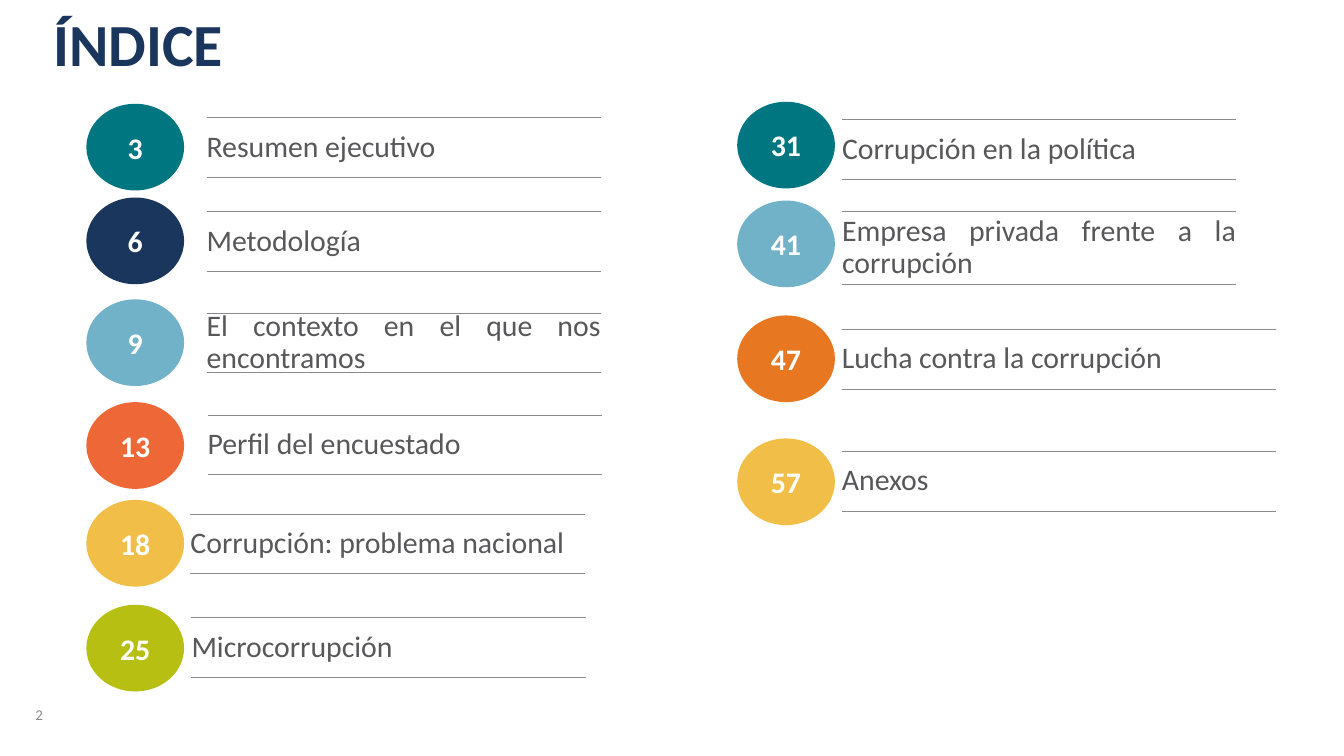
import pptx
import pptx.dml.color
import pptx.enum.shapes
import pptx.enum.text
import pptx.oxml.ns
import pptx.util
import lxml.etree

ALIGN = pptx.enum.text.PP_ALIGN
ANCHOR = pptx.enum.text.MSO_ANCHOR
COLUMNS, ROWS = 40, 30
DISC_WIDTH, DISC_HEIGHT = 2.91, 3.44
LINE_HEIGHT = 1.3
RULE_GAP, WIDE_GAP = 2.36, 2.88
NARROW, WIDE = 11.73, 12.91
LEFT_DISC, RIGHT_DISC, RIGHT_LABEL = 2.57, 21.94, 25.06


def color(value):
    return pptx.dml.color.RGBColor.from_string(value)


class IndexSlide:
    font = "Calibri"
    navy, gray, ink, white = "1B365D", "888B8D", "58585B", "FFFFFF"

    def __init__(self, prs):
        self.col = prs.slide_width / COLUMNS
        self.row = prs.slide_height / ROWS
        self.s = prs.slides.add_slide(prs.slide_layouts[5])

    def box(self, x, y, w, h):
        return [round(v) for v in (x * self.col, y * self.row, w * self.col, h * self.row)]

    def add_text(self, tf, text, size, hue, bold=False, align=ALIGN.LEFT, spacing=0.9):
        p = tf.paragraphs[0]
        p.alignment = align
        p.line_spacing = spacing
        p.space_before = pptx.util.Pt(0)
        r = p.add_run()
        r.text = text
        r.font.name = self.font
        r.font.size = pptx.util.Pt(size)
        r.font.bold = bold
        r.font.color.rgb = color(hue)

    def frame(self, sp, anchor, wrap=True):
        tf = sp.text_frame
        tf.margin_left = tf.margin_right = tf.margin_top = tf.margin_bottom = 0
        tf.vertical_anchor = anchor
        tf.word_wrap = wrap
        return tf

    def title(self, text, x, y, w, h):
        sp = self.s.shapes.title
        sp.left, sp.top, sp.width, sp.height = self.box(x, y, w, h)
        tf = self.frame(sp, ANCHOR.TOP)
        tf.auto_size = pptx.enum.text.MSO_AUTO_SIZE.NONE
        self.add_text(tf, text, 42.7, self.navy, bold=True)

    def page_number(self, text, x, y, w, h):
        sp = self.s.shapes.add_textbox(*self.box(x, y, w, h))
        self.add_text(self.frame(sp, ANCHOR.BOTTOM, False), text, 10.7, self.gray, spacing=0.85)

    def disc(self, text, fill, x, y):
        sp = self.s.shapes.add_shape(pptx.enum.shapes.MSO_SHAPE.OVAL,
                                     *self.box(x, y, DISC_WIDTH, DISC_HEIGHT))
        sp.shadow.inherit = False
        sp.fill.solid()
        sp.fill.fore_color.rgb = color(fill)
        sp.line.fill.background()
        sp.text_frame.vertical_anchor = ANCHOR.MIDDLE
        self.add_text(sp.text_frame, text, 21.3, self.white, True, ALIGN.CENTER, 1.0)

    def rule(self, x, y, w):
        left, top, width, _ = self.box(x, y, w, 0)
        line = self.s.shapes.add_connector(pptx.enum.shapes.MSO_CONNECTOR.STRAIGHT,
                                           left, top, left + width, top)
        line.line.color.rgb = color(self.gray)
        line.line.width = pptx.util.Pt(0.75)
        lxml.etree.SubElement(line._element.spPr, pptx.oxml.ns.qn("a:effectLst"))

    def label(self, text, x, y, w, gap, lines):
        height = LINE_HEIGHT * lines
        sp = self.s.shapes.add_textbox(*self.box(x, y + (gap - height) / 2, w, height))
        align = ALIGN.JUSTIFY if lines > 1 else ALIGN.LEFT
        self.add_text(self.frame(sp, ANCHOR.MIDDLE), text, 21.3, self.ink, align=align)
        for offset in (0, gap):
            self.rule(x, y + offset, w)


LEFT_ENTRIES = [
    ("3", "007681", 4.12, "Resumen ejecutivo", 6.15, 4.68, NARROW, RULE_GAP, 1),
    ("6", "1B365D", 7.84, "Metodología", 6.15, 8.4, NARROW, RULE_GAP, 1),
    ("9", "71B2C9", 11.88, "El contexto en el que nos encontramos", 6.15, 12.44, NARROW, RULE_GAP, 2),
    ("13", "ED6737", 15.96, "Perfil del encuestado", 6.18, 16.48, NARROW, RULE_GAP, 1),
    ("18", "F1BE48", 19.84, "Corrupción: problema nacional", 5.67, 20.4, NARROW, RULE_GAP, 1),
    ("25", "B7BF12", 24, "Microcorrupción", 5.7, 24.52, NARROW, RULE_GAP, 1),
]
RIGHT_ENTRIES = [
    ("31", "007681", 4.04, "Corrupción en la política", RIGHT_LABEL, 4.76, NARROW, RULE_GAP, 1),
    ("41", "71B2C9", 7.96, "Empresa privada frente a la corrupción", RIGHT_LABEL, 8.4, NARROW, WIDE_GAP, 2),
    ("47", "E87722", 12.52, "Lucha contra la corrupción", RIGHT_LABEL, 13.08, WIDE, RULE_GAP, 1),
    ("57", "F1BE48", 17.4, "Anexos", RIGHT_LABEL, 17.92, WIDE, RULE_GAP, 1),
]


def main():
    prs = pptx.Presentation()
    prs.slide_width = pptx.util.Inches(13.33)
    prs.slide_height = pptx.util.Inches(7.5)
    index = IndexSlide(prs)
    index.title("ÍNDICE", 1.59, 0.6, 11.64, 2.64)
    index.page_number("2", 1.05, 27.32, 1.35, 1.4)
    for disc_x, entries in ((LEFT_DISC, LEFT_ENTRIES), (RIGHT_DISC, RIGHT_ENTRIES)):
        for page, fill, disc_y, text, x, y, width, gap, lines in entries:
            index.disc(page, fill, disc_x, disc_y)
            index.label(text, x, y, width, gap, lines)
    prs.save("out.pptx")


if __name__ == "__main__":
    main()
